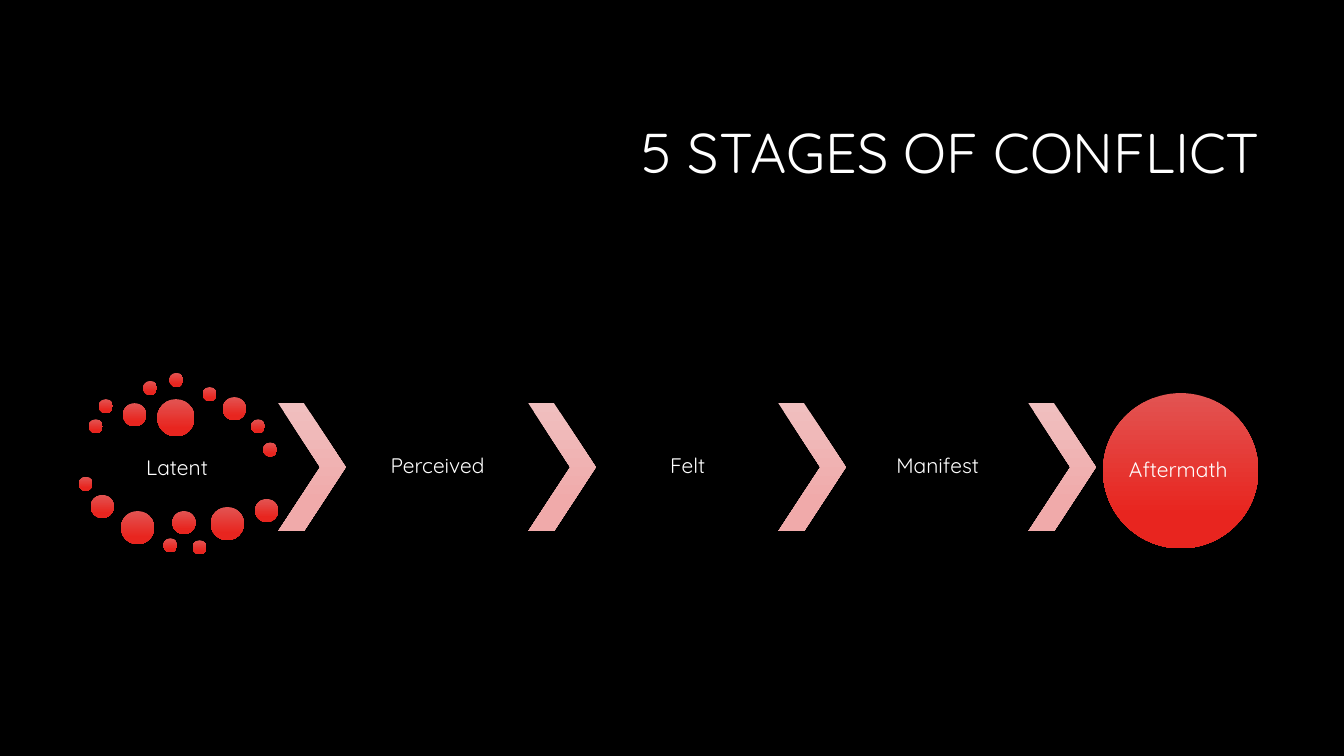
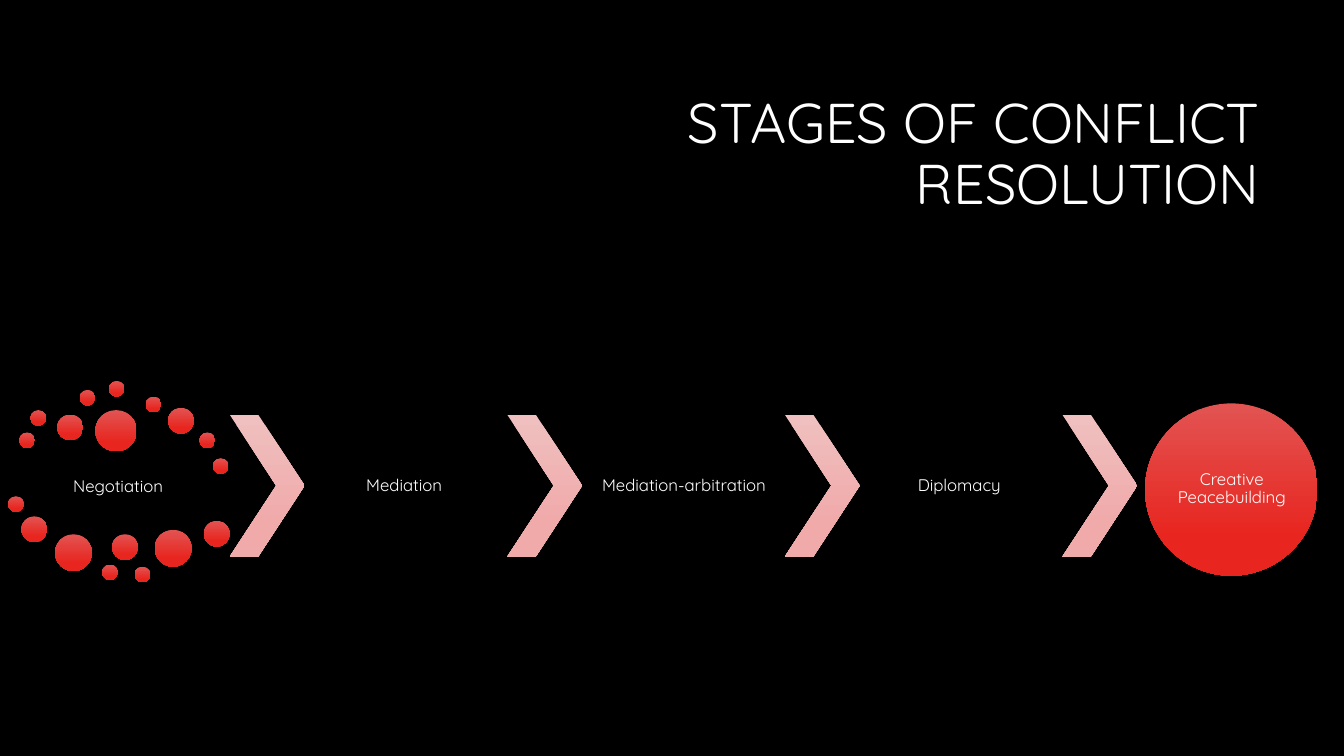
"""Build two slides that show conflict and its resolution as staged processes."""
from pptx import Presentation
from pptx.dml.color import RGBColor
from pptx.enum import shapes, text
from pptx.util import Inches, Pt

FONT = "Quicksand"
BLACK, WHITE = "000000", "FFFFFF"
RED = ("E25452", "E8251F")
PINK = ("F0BFBF", "F0AAAA")
TITLE_BOX = (3.19, 0.84, 9.4, 1.41)

PROCESSES = [
    {"title": "5 STAGES OF CONFLICT", "origin": (0.78, 3.7), "scale": 1, "size": 15,
     "stages": ["Latent ", "Perceived", "Felt", "Manifest", "Aftermath "]},
    {"title": "STAGES OF CONFLICT RESOLUTION", "origin": (0.08, 3.78), "scale": 1.11, "size": 12,
     "stages": ["Negotiation ", "Mediation ", "Mediation-arbitration", "Diplomacy ",
                "Creative Peacebuilding"]},
]

# Left and top of the dots by diameter, measured from the process origin at scale 1
DOTS = {
    0.14: [(0.1, 0.46), (0.2, 0.26), (0.64, 0.08), (0.9, 0), (1.23, 0.14), (1.71, 0.46),
           (1.83, 0.69), (0, 1.03), (0.84, 1.64), (1.13, 1.66)],
    0.23: [(0.44, 0.3), (1.43, 0.24), (0.12, 1.21), (0.93, 1.37), (1.75, 1.25)],
    0.33: [(0.42, 1.37), (1.31, 1.33)],
    0.37: [(0.78, 0.26)],
}
FIRST_LABEL = (0.1, 0.65, 1.81, 0.6)
CHEVRON = (1.98, 0.3, 0.67, 1.27)
STAGE_WIDTH = 1.82
STAGE_STEP = 2.48
FINAL_CIRCLE = (10.16, 0.2, 1.54, 1.54)
FINAL_LABEL = (10.39, 0.42, 1.09, 1.09)


def rgb(value):
    return RGBColor.from_string(value)


def add_text(slide, box, words, size, align, inset=None):
    frame = slide.shapes.add_textbox(*map(Inches, box)).text_frame
    formats = {"word_wrap": True, "vertical_anchor": text.MSO_ANCHOR.MIDDLE}
    if inset is not None:
        for side in ("left", "top", "right", "bottom"):
            formats[f"margin_{side}"] = Inches(inset)
    for key, value in formats.items():
        setattr(frame, key, value)
    paragraph = frame.paragraphs[0]
    paragraph.alignment, paragraph.line_spacing = align, 0.9
    run = paragraph.add_run()
    run.text = words
    for key, value in {"name": FONT, "size": Pt(size)}.items():
        setattr(run.font, key, value)
    run.font.color.rgb = rgb(WHITE)


def add_gradient_shape(slide, kind, box, colors):
    shape = slide.shapes.add_shape(kind, *map(Inches, box))
    shape.shadow.inherit = False
    shape.line.fill.background()
    shape.fill.gradient()
    shape.fill.gradient_angle = 270
    for stop, position, color in zip(shape.fill.gradient_stops, (0, 0.78), colors):
        stop.position, stop.color.rgb = position, rgb(color)
    return shape


def add_process(slide, process):
    (left, top), scale = process["origin"], process["scale"]
    first, *middle, final = process["stages"]
    oval, chevron = shapes.MSO_SHAPE.OVAL, shapes.MSO_SHAPE.CHEVRON

    def place(x, y, width, height):
        return left + x * scale, top + y * scale, width * scale, height * scale

    def label(words, box, inset=0.02):
        add_text(slide, place(*box), words, process["size"], text.PP_ALIGN.CENTER, inset)

    label(first, FIRST_LABEL)
    for diameter, spots in DOTS.items():
        for x, y in spots:
            add_gradient_shape(slide, oval, place(x, y, diameter, diameter), RED)
    x, y, width, height = CHEVRON
    for index, stage in enumerate(middle + [None]):
        start = x + index * STAGE_STEP
        arrow = add_gradient_shape(slide, chevron, place(start, y, width, height), PINK)
        arrow.adjustments[0] = 0.62
        if stage:
            label(stage, (start + width, y, STAGE_WIDTH, height))
    add_gradient_shape(slide, oval, place(*FINAL_CIRCLE), RED)
    label(final, FINAL_LABEL, 0)


def main():
    prs = Presentation()
    prs.slide_width, prs.slide_height = Inches(13.33), Inches(7.5)
    backdrop = prs.slide_master.background.fill
    backdrop.solid()
    backdrop.fore_color.rgb = rgb(BLACK)
    for process in PROCESSES:
        slide = prs.slides.add_slide(prs.slide_layouts[6])
        add_text(slide, TITLE_BOX, process["title"], 40, text.PP_ALIGN.RIGHT)
        add_process(slide, process)
    prs.save("out.pptx")


if __name__ == "__main__":
    main()
